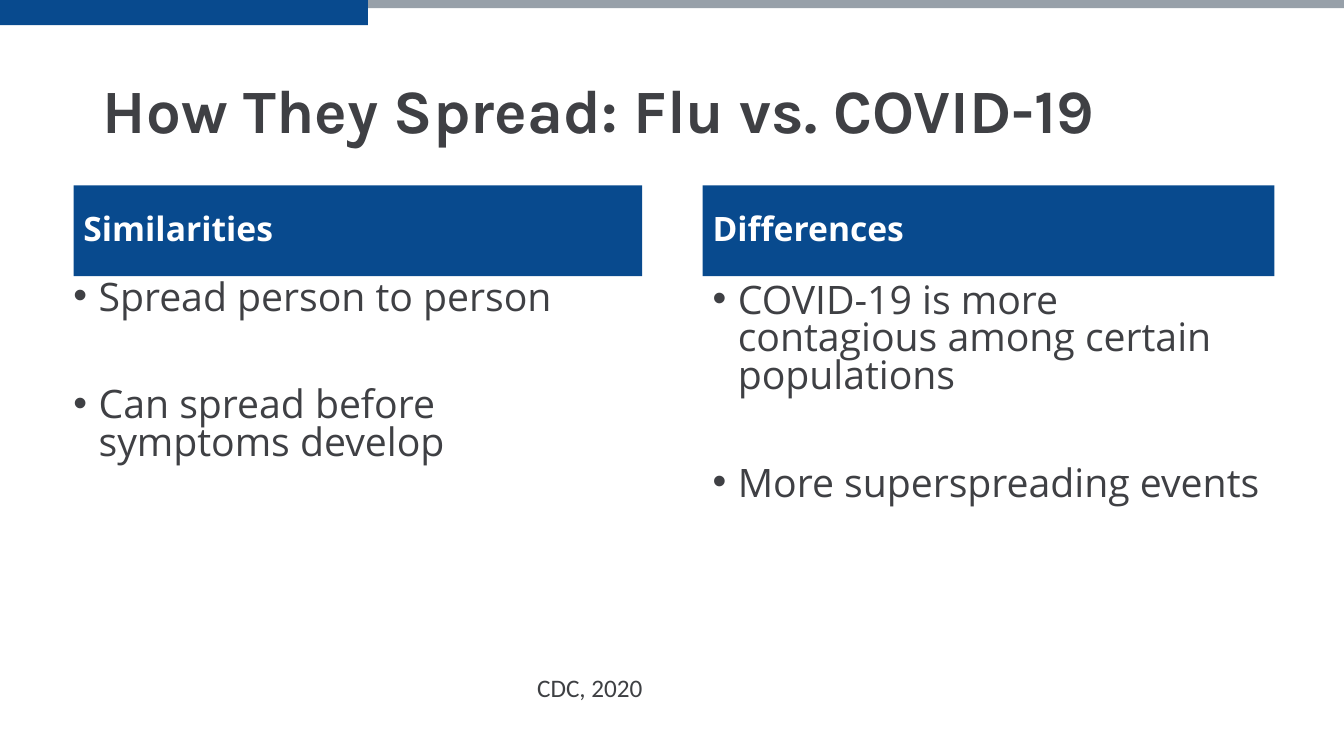
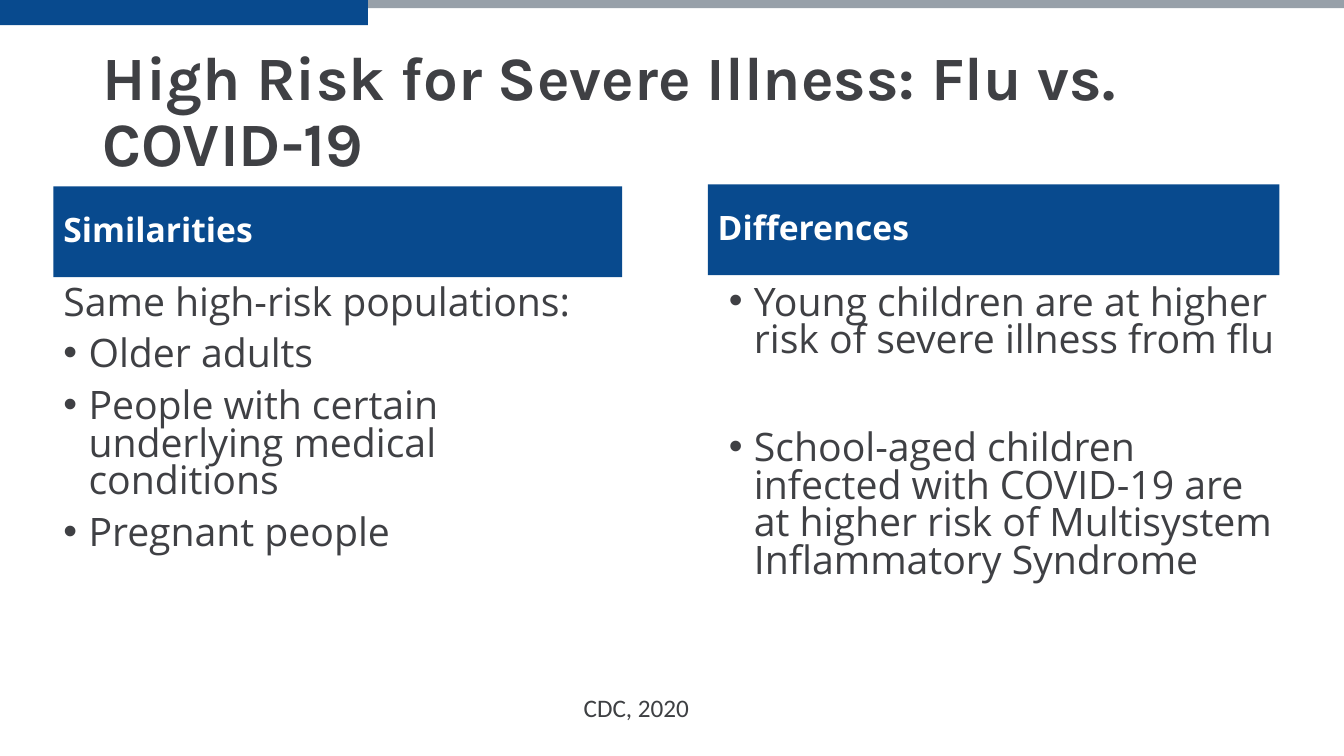
from lxml import etree
from pptx import Presentation
from pptx.dml.color import RGBColor
from pptx.enum.shapes import MSO_SHAPE
from pptx.enum.text import MSO_ANCHOR, MSO_AUTO_SIZE, PP_ALIGN
from pptx.oxml.ns import qn
from pptx.util import Inches, Pt

RECTANGLE = MSO_SHAPE.RECTANGLE
MIDDLE, TOP = MSO_ANCHOR.MIDDLE, MSO_ANCHOR.TOP
LEFT = PP_ALIGN.LEFT
NO_FIT = MSO_AUTO_SIZE.NONE
TITLE_ONLY = 5

BLUE, GRAY = "084A8E", "97A0A9"
TITLE_BOX = (0.92, 0.4, 11.5, 1.45)
BANDS = [((0, 0, 3.65, 0.25), BLUE), ((3.65, 0, 9.68, 0.08), GRAY)]
HEADING_HEIGHT, BODY_HEIGHT = 0.9, 4.03
INDENT = 0.25
SPACE, WIDE_SPACE = 10, 50

TITLE = {"name": "Karla", "size": Pt(44), "bold": True, "color": "3F4044"}
HEADING = {"name": "Open Sans", "size": Pt(24), "bold": True, "color": "FFFFFF"}
BODY = {"name": "Open Sans", "size": Pt(28), "bold": False, "color": "3F4044"}
CITATION = {"name": "Calibri", "size": Pt(18), "bold": False, "color": "3E4043"}

SLIDES = [
    {
        "title": "How They Spread: Flu vs. COVID-19",
        "columns": [
            {"heading": "Similarities", "heading_box": (0.73, 1.84, 5.64),
             "body_box": (0.63, 2.74, 5.64), "gap": WIDE_SPACE,
             "bullets": ["Spread person to person",
                         "Can spread before symptoms develop"]},
            {"heading": "Differences", "heading_box": (6.97, 1.84, 5.67),
             "body_box": (6.97, 2.77, 5.67), "gap": WIDE_SPACE,
             "bullets": ["COVID-19 is more contagious among certain populations",
                         "More superspreading events"]},
        ],
        "citation_box": (5.23, 6.62, 3.16, 0.4),
    },
    {
        "title": "High Risk for Severe Illness: Flu vs. COVID-19",
        "columns": [
            {"heading": "Similarities", "heading_box": (0.53, 1.85, 5.64),
             "body_box": (0.53, 2.79, 5.64), "gap": SPACE,
             "intro": "Same high-risk populations:",
             "bullets": ["Older adults",
                         "People with certain underlying medical conditions",
                         "Pregnant people"]},
            {"heading": "Differences", "heading_box": (7.02, 1.83, 5.67),
             "body_box": (7.13, 2.79, 5.67), "gap": WIDE_SPACE,
             "bullets": ["Young children are at higher risk of severe illness from flu",
                         "School-aged children infected with COVID-19 are at higher risk "
                         "of Multisystem Inflammatory Syndrome"]},
        ],
        "citation_box": (5.69, 6.82, 1.86, 0.4),
    },
]


def rgb(value):
    return RGBColor.from_string(value)


def inches(box):
    return [Inches(length) for length in box]


def add_rectangle(slide, box, color):
    shape = slide.shapes.add_shape(RECTANGLE, *inches(box))
    shape.shadow.inherit = False
    shape.fill.solid()
    shape.fill.fore_color.rgb = rgb(color)
    shape.line.fill.background()
    return shape


def format_frame(frame, anchor):
    settings = {"word_wrap": True, "auto_size": NO_FIT, "vertical_anchor": anchor}
    for name, value in settings.items():
        setattr(frame, name, value)


def write(paragraph, text, style, spacing=0.9):
    paragraph.text = text
    paragraph.alignment = LEFT
    paragraph.line_spacing = spacing
    for name, value in style.items():
        if name == "color":
            paragraph.font.color.rgb = rgb(value)
        else:
            setattr(paragraph.font, name, value)


def add_bullet(paragraph):
    properties = paragraph._p.get_or_add_pPr()
    properties.set("marL", str(Inches(INDENT)))
    properties.set("indent", str(-Inches(INDENT)))
    etree.SubElement(properties, qn("a:buFont")).set("typeface", "Arial")
    etree.SubElement(properties, qn("a:buChar")).set("char", "•")


def add_bands(slide):
    for box, color in BANDS:
        add_rectangle(slide, box, color)


def add_title(slide, text, box):
    title = slide.shapes.title
    title.left, title.top, title.width, title.height = inches(box)
    format_frame(title.text_frame, MIDDLE)
    write(title.text_frame.paragraphs[0], text, TITLE)


def add_heading(slide, text, box):
    frame = add_rectangle(slide, box, BLUE).text_frame
    format_frame(frame, MIDDLE)
    write(frame.paragraphs[0], text, HEADING)


def add_body(slide, column, box):
    frame = slide.shapes.add_textbox(*inches(box)).text_frame
    format_frame(frame, TOP)
    intro = [column["intro"]] if "intro" in column else []
    for index, text in enumerate(intro + column["bullets"]):
        paragraph = frame.add_paragraph() if index else frame.paragraphs[0]
        if index >= len(intro):
            add_bullet(paragraph)
        write(paragraph, text, BODY, 0.8)
        if index:
            paragraph.space_before = Pt(column["gap"])


def add_column(slide, column):
    add_heading(slide, column["heading"], (*column["heading_box"], HEADING_HEIGHT))
    add_body(slide, column, (*column["body_box"], BODY_HEIGHT))


def add_citation(slide, box):
    frame = slide.shapes.add_textbox(*inches(box)).text_frame
    format_frame(frame, TOP)
    write(frame.paragraphs[0], "CDC, 2020", CITATION, 1.0)


def add_comparison(presentation, content):
    slide = presentation.slides.add_slide(presentation.slide_layouts[TITLE_ONLY])
    add_bands(slide)
    add_title(slide, content["title"], TITLE_BOX)
    for column in content["columns"]:
        add_column(slide, column)
    add_citation(slide, content["citation_box"])


def main():
    presentation = Presentation()
    presentation.slide_width = Inches(13.33)
    presentation.slide_height = Inches(7.5)
    for content in SLIDES:
        add_comparison(presentation, content)
    presentation.save("out.pptx")


if __name__ == "__main__":
    main()
